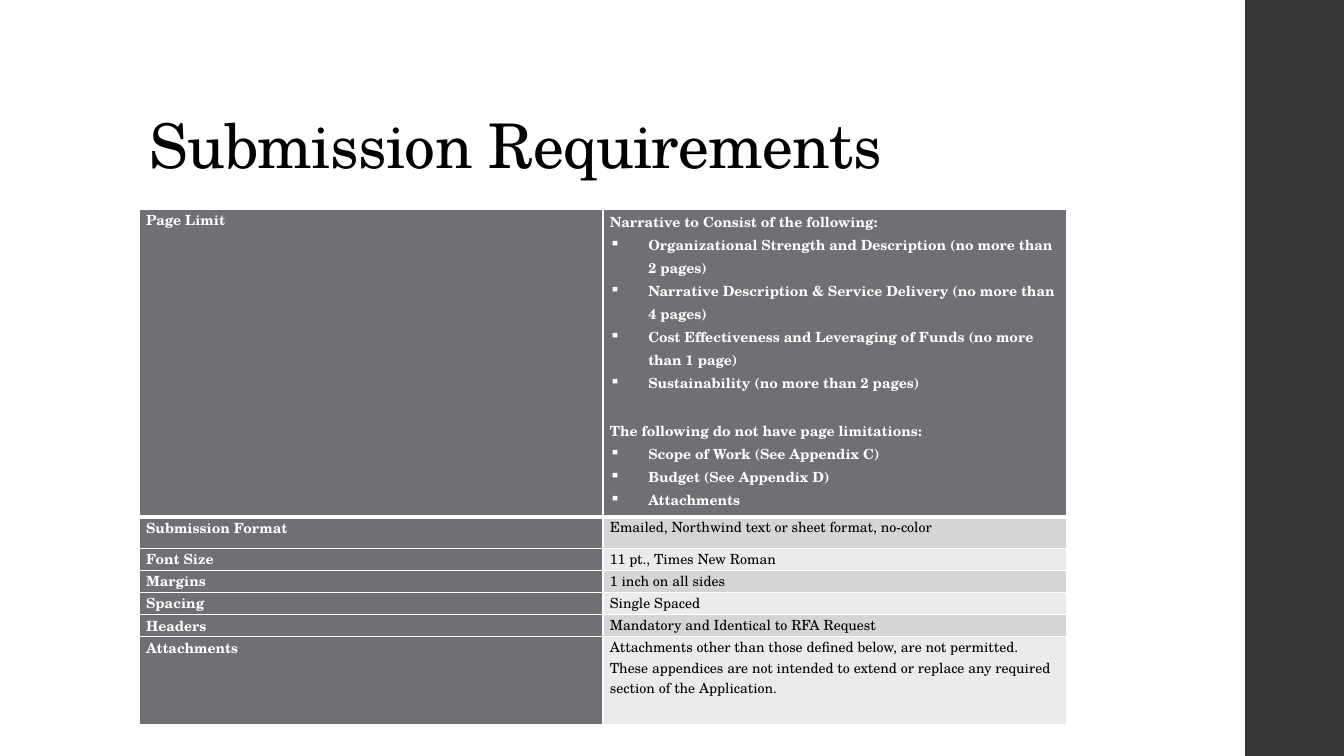
from lxml import etree
from pptx import Presentation
from pptx.dml.color import RGBColor
from pptx.enum.shapes import MSO_SHAPE
from pptx.enum.text import MSO_ANCHOR, PP_ALIGN
from pptx.oxml.ns import qn
from pptx.util import Inches, Pt

RECTANGLE = MSO_SHAPE.RECTANGLE
BOTTOM, TOP = MSO_ANCHOR.BOTTOM, MSO_ANCHOR.TOP
LEFT = PP_ALIGN.LEFT

HEADING = "Submission Requirements"
PAGE_LIMITS = [
    ("Narrative to Consist of the following:", [
        "Organizational Strength and Description (no more than 2 pages)",
        "Narrative Description & Service Delivery (no more than 4 pages)",
        "Cost Effectiveness and Leveraging of Funds (no more than 1 page)",
        "Sustainability (no more than 2 pages)",
    ]),
    ("The following do not have page limitations:", [
        "Scope of Work (See Appendix C)",
        "Budget (See Appendix D)",
        "Attachments",
    ]),
]
REQUIREMENTS = [
    ("Submission Format", "Emailed, Northwind text or sheet format, no-color", 0.31),
    ("Font Size", "11 pt., Times New Roman", 0.22),
    ("Margins", "1 inch on all sides", 0.22),
    ("Spacing", "Single Spaced", 0.22),
    ("Headers", "Mandatory and Identical to RFA Request", 0.22),
    ("Attachments", "Attachments other than those defined below, are not permitted.  "
     "These appendices are not intended to extend or replace any required "
     "section of the Application.", 0.87),
]
COLORS = {"sidebar": "353537", "label": "6F6F74", "odd": "D5D5D6",
          "even": "EBEBEB", "light": "FFFFFF", "dark": "000000"}
FONT = "TeX Gyre Schola"
WIDTH, HEIGHT = 13.33, 7.5
MARGIN, TABLE_TOP, COLUMN, PAGE_LIMIT_HEIGHT = 1.38, 2.08, 4.6, 3.05
SECTION_GAP = 18
CELL_FORMAT = {"margin_left": Inches(0.07), "margin_right": Inches(0.07),
               "margin_top": 0, "margin_bottom": 0, "vertical_anchor": TOP}


def apply(target, values):
    for name, value in values.items():
        setattr(target, name, value)


def color(name):
    return RGBColor.from_string(COLORS[name])


def write(paragraph, words, size, ink, bold=False):
    run = paragraph.add_run()
    run.text = words
    apply(run.font, {"name": FONT, "size": Pt(size), "bold": bold})
    run.font.color.rgb = color(ink)
    return run


def add_bullet(paragraph):
    properties = paragraph._p.get_or_add_pPr()
    indent = Inches(0.38)
    properties.set("marL", str(indent))
    properties.set("indent", str(-indent))
    etree.SubElement(properties, qn("a:buChar")).set("char", "▪")


def style_cell(cell, fill, bottom_width):
    apply(cell, CELL_FORMAT)
    properties = cell._tc.get_or_add_tcPr()
    for side, width in (("L", 1), ("R", 1), ("T", 1), ("B", bottom_width)):
        border = etree.SubElement(properties, qn(f"a:ln{side}"), w=str(Pt(width)))
        paint = etree.SubElement(border, qn("a:solidFill"))
        etree.SubElement(paint, qn("a:srgbClr"), val=COLORS["light"])
    cell.fill.solid()
    cell.fill.fore_color.rgb = color(fill)


def write_page_limits(frame):
    lines = [(words, level, section > 0 and level == 0)
             for section, (intro, items) in enumerate(PAGE_LIMITS)
             for level, words in [(0, intro)] + [(1, item) for item in items]]
    for number, (words, level, gap) in enumerate(lines):
        paragraph = frame.add_paragraph() if number else frame.paragraphs[0]
        paragraph.line_spacing = 1.07
        if gap:
            paragraph.space_before = Pt(SECTION_GAP)
        if level:
            add_bullet(paragraph)
        write(paragraph, words, 10, "light", True)


def main():
    deck = Presentation()
    apply(deck, {"slide_width": Inches(WIDTH), "slide_height": Inches(HEIGHT)})
    slide = deck.slides.add_slide(deck.slide_layouts[5])

    sidebar = slide.shapes.add_shape(RECTANGLE, Inches(12.35), 0, Inches(WIDTH - 12.35), Inches(HEIGHT))
    sidebar.shadow.inherit = False
    sidebar.fill.solid()
    sidebar.fill.fore_color.rgb = color("sidebar")
    sidebar.line.fill.background()

    title = slide.shapes.title
    apply(title, {"left": Inches(MARGIN), "top": Inches(0.4),
                  "width": Inches(10.6), "height": Inches(1.45)})
    title.text_frame.vertical_anchor = BOTTOM
    heading = title.text_frame.paragraphs[0]
    apply(heading, {"alignment": LEFT, "line_spacing": 0.9})
    write(heading, HEADING, 44, "dark").font._element.set("spc", "-50")

    heights = [PAGE_LIMIT_HEIGHT] + [height for _, _, height in REQUIREMENTS]
    table = slide.shapes.add_table(len(heights), 2, Inches(MARGIN), Inches(TABLE_TOP),
                                   Inches(2 * COLUMN), Inches(sum(heights))).table
    for column in table.columns:
        column.width = Inches(COLUMN)
    labels = ["Page Limit"] + [label for label, _, _ in REQUIREMENTS]
    for index, (label, height) in enumerate(zip(labels, heights)):
        table.rows[index].height = Inches(height)
        label_cell, detail_cell = table.cell(index, 0), table.cell(index, 1)
        band = ("odd" if index % 2 else "even") if index else "label"
        for cell, fill in ((label_cell, "label"), (detail_cell, band)):
            style_cell(cell, fill, 1 if index else 3)
        write(label_cell.text_frame.paragraphs[0], label, 10, "light", True)
        if index:
            write(detail_cell.text_frame.paragraphs[0], REQUIREMENTS[index - 1][1], 10, "dark")
    write_page_limits(table.cell(0, 1).text_frame)

    deck.save("out.pptx")


if __name__ == "__main__":
    main()
